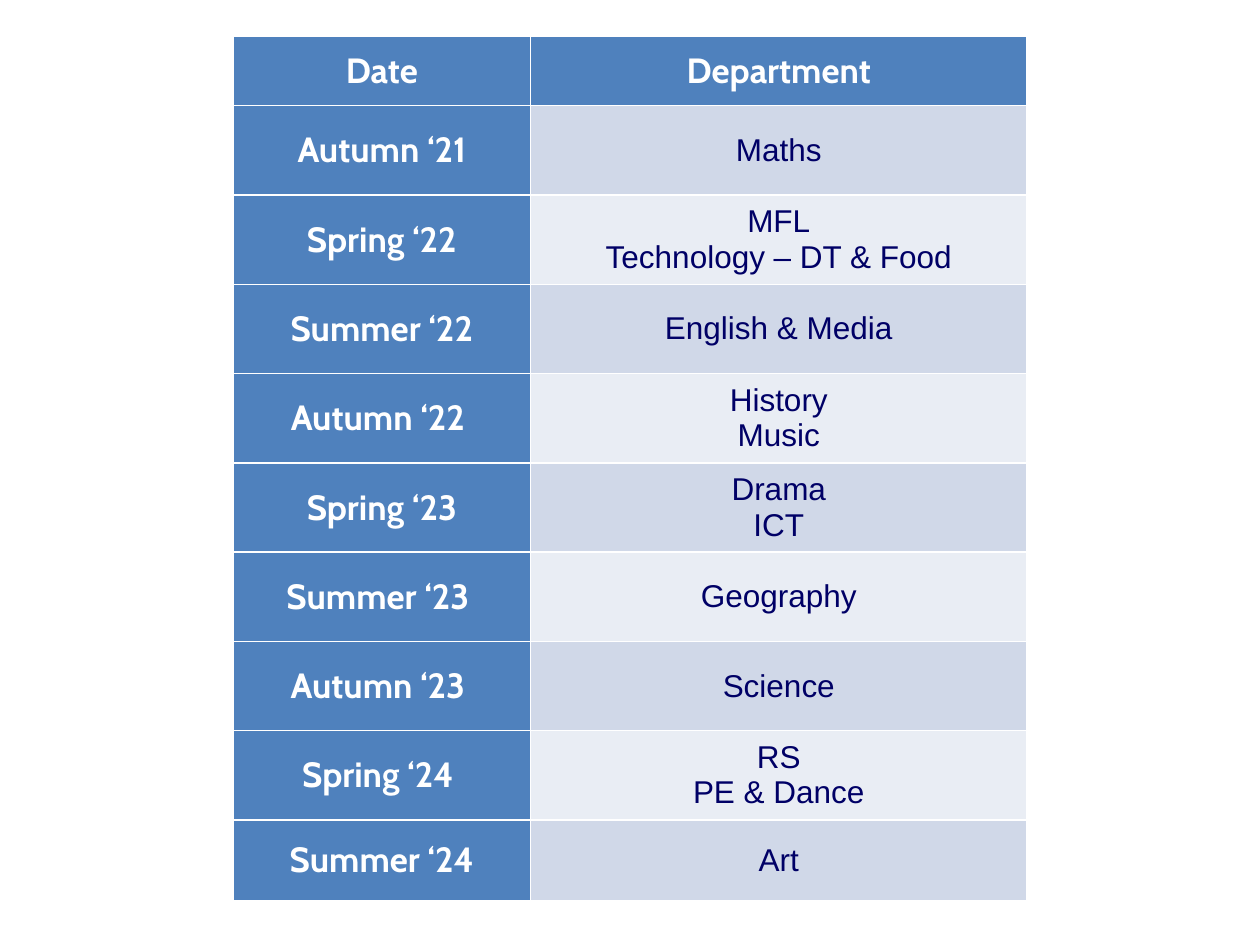
from lxml import etree
from pptx import Presentation, util as u
from pptx.dml import color
from pptx.enum import text
from pptx.oxml import ns

WIDE, HIGH = 10, 7.5
HEAD = {"name": "Cabin", "size": u.Pt(20), "bold": True}
BODY = {"name": "Arial", "size": u.Pt(18), "bold": False}
CELL = {
    "vertical_anchor": text.MSO_ANCHOR.MIDDLE,
    "margin_left": u.Inches(0.07),
    "margin_right": u.Inches(0.07),
    "margin_top": u.Inches(0.04),
    "margin_bottom": u.Inches(0.04),
}
BLUE, WHITE, NAVY = "4F81BD", "FFFFFF", "000066"
BANDS = ["D0D8E8", "E9EDF4"]
TERMS = [
    ("Date", "Department"),
    ("Autumn ‘21", "Maths"),
    ("Spring ‘22", "MFL\nTechnology – DT & Food"),
    ("Summer ‘22", "English & Media"),
    ("Autumn ‘22 ", "History\nMusic"),
    ("Spring ‘23", "Drama\nICT"),
    ("Summer ‘23 ", "Geography"),
    ("Autumn ‘23 ", "Science"),
    ("Spring ‘24 ", "RS\nPE & Dance"),
    ("Summer ‘24", "Art"),
]


def tint(fill, code):
    fill.solid()
    fill.fore_color.rgb = color.RGBColor.from_string(code)


def style(item, form):
    for key, val in form.items():
        setattr(item, key, val)


def edge(cell, code):
    props = cell._tc.get_or_add_tcPr()
    for side in "LRTB":
        line = etree.SubElement(props, ns.qn(f"a:ln{side}"), w=str(u.Pt(1)))
        fill = etree.SubElement(line, ns.qn("a:solidFill"))
        etree.SubElement(fill, ns.qn("a:srgbClr"), val=code)


def write(cell, words, form, ink, back):
    style(cell, CELL)
    edge(cell, WHITE)
    tint(cell.fill, back)
    cell.text = words
    for para in cell.text_frame.paragraphs:
        para.alignment = text.PP_ALIGN.CENTER
        for run in para.runs:
            style(run.font, form)
            tint(run.font.fill, ink)


def plan(slide, box, cols, rows):
    left, top, wide, high = box
    grid = slide.shapes.add_table(len(rows), len(cols), left, top, wide, high).table
    for col, part in zip(grid.columns, cols):
        col.width = int(wide * part / sum(cols))
    for row, part in zip(grid.rows, rows):
        row.height = int(high * part / sum(rows))
    for r, pair in enumerate(TERMS):
        for c, words in enumerate(pair):
            if r == 0 or c == 0:
                look = HEAD, WHITE, BLUE
            else:
                look = BODY, NAVY, BANDS[(r - 1) % 2]
            write(grid.cell(r, c), words, *look)


def main():
    deck = Presentation()
    deck.slide_width, deck.slide_height = u.Inches(WIDE), u.Inches(HIGH)
    slide = deck.slides.add_slide(deck.slide_layouts[6])
    box = [u.Inches(n) for n in (1.85, 0.29, 6.3, 6.86)]
    plan(slide, box, [3, 5], [0.55] + [0.71] * 8 + [0.64])
    deck.save("out.pptx")


if __name__ == "__main__":
    main()
